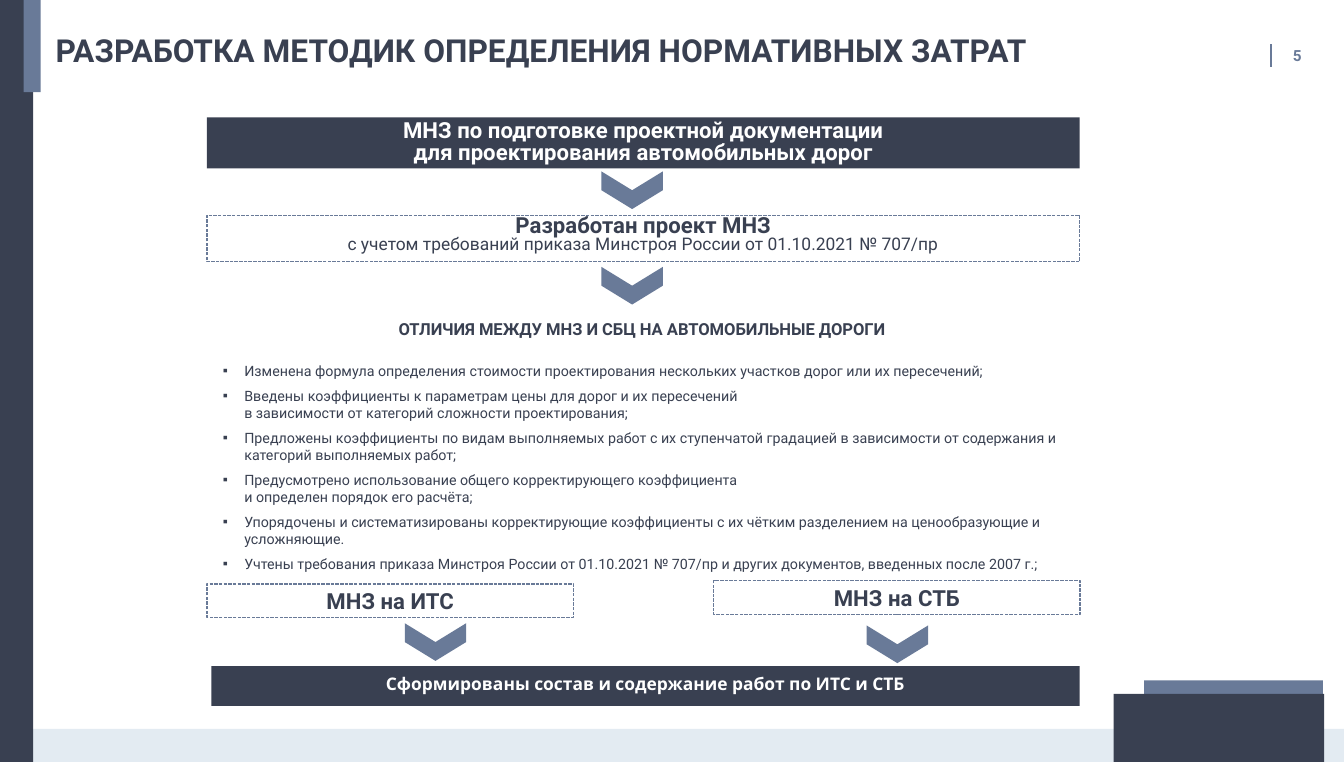
from copy import deepcopy

from lxml import etree
from pptx import Presentation
from pptx import util as u
from pptx.dml.color import RGBColor
from pptx.enum import dml, shapes, text
from pptx.oxml.ns import qn

NAVY, STEEL, PALE, WHITE = "394051", "697A98", "E3EBF2", "FFFFFF"
CENTER, LEFT = text.PP_ALIGN.CENTER, text.PP_ALIGN.LEFT
DIFFERENCES = [
    "Изменена формула определения стоимости проектирования нескольких участков дорог или их пересечений;",
    "Введены коэффициенты к параметрам цены для дорог и их пересечений\vв зависимости от категорий сложности проектирования;",
    "Предложены коэффициенты по видам выполняемых работ с их ступенчатой градацией в зависимости от содержания и категорий выполняемых работ;",
    "Предусмотрено использование общего корректирующего коэффициента\vи определен порядок его расчёта;",
    "Упорядочены и систематизированы корректирующие коэффициенты с их чётким разделением на ценообразующие и усложняющие.",
    "Учтены требования приказа Минстроя России от 01.10.2021 № 707/пр и других документов, введенных после 2007 г.;",
]


def rgb(color):
    """Turn a hex string into a colour."""
    return RGBColor.from_string(color)


def place(item, left, top, width, height):
    """Move and size an element, in centimetres."""
    item.left, item.top, item.width, item.height = map(u.Cm, (left, top, width, height))


def style(paragraph, size, color=NAVY, bold=True, align=CENTER, spacing=1.0, before=0, font="Roboto"):
    """Format a paragraph, its runs and its line breaks."""
    paragraph.alignment = align
    paragraph.line_spacing = spacing
    paragraph.space_before = u.Pt(before)
    for run in paragraph.runs:
        run.font.name, run.font.size, run.font.bold = font, u.Pt(size), bold
        run.font.color.rgb = rgb(color)
    for line_break in paragraph._p.findall(qn("a:br")):
        line_break.insert(0, deepcopy(paragraph.runs[0]._r.rPr))


def add_block(slide, box, fill=None, outline=None, preset=shapes.MSO_SHAPE.RECTANGLE):
    """Add a flat shape with a fill or a dashed outline."""
    block = slide.shapes.add_shape(preset, *map(u.Cm, box))
    block.shadow.inherit = False
    if fill:
        block.fill.solid()
        block.fill.fore_color.rgb = rgb(fill)
    else:
        block.fill.background()
    if outline:
        block.line.color.rgb = rgb(outline)
        block.line.width = u.Pt(0.75)
        block.line.dash_style = dml.MSO_LINE.SQUARE_DOT
    else:
        block.line.fill.background()
    return block


def add_stage(slide, box, label, fill=None, size=14, **formats):
    """Add a labelled stage, outlined unless it has a fill."""
    stage = add_block(slide, box, fill, None if fill else STEEL)
    stage.text_frame.text = label
    style(stage.text_frame.paragraphs[0], size, WHITE if fill else NAVY, **formats)
    return stage


def add_chevron(slide, left, top):
    """Add a chevron that points down."""
    add_block(slide, (left, top, 0.84, 1.37), STEEL, preset=shapes.MSO_SHAPE.CHEVRON).rotation = 90


def add_frame(slide):
    """Add the decorative bars and the page number."""
    for box, color in [
        ((0, 16.26, 30, 0.74), PALE),
        ((0, 0, 0.74, 17), NAVY),
        ((25.54, 15.18, 3.99, 1.07), STEEL),
        ((24.86, 15.48, 4.7, 1.52), NAVY),
        ((0.53, 0, 0.38, 2.06), STEEL),
    ]:
        add_block(slide, box, color)
    divider = slide.shapes.add_connector(
        shapes.MSO_CONNECTOR.STRAIGHT, u.Cm(28.37), u.Cm(0.99), u.Cm(28.37), u.Cm(1.5))
    divider.line.color.rgb = rgb(STEEL)
    divider.line.width = u.Pt(1.5)
    etree.SubElement(divider._element.spPr, qn("a:effectLst"))
    page = slide.shapes.add_textbox(u.Cm(28.61), u.Cm(1.04), u.Cm(1.35), u.Cm(0.38)).text_frame
    page.word_wrap = True
    page.vertical_anchor = text.MSO_ANCHOR.MIDDLE
    page.text = "5"
    style(page.paragraphs[0], 9.7, STEEL, align=LEFT)


def fill_title(title):
    """Set the slide title."""
    place(title, 1.24, 0.66, 26.67, 0.84)
    frame = title.text_frame
    frame.text = "РАЗРАБОТКА МЕТОДИК ОПРЕДЕЛЕНИЯ НОРМАТИВНЫХ ЗАТРАТ"
    frame.margin_left = frame.margin_right = frame.margin_top = frame.margin_bottom = 0
    frame.vertical_anchor = text.MSO_ANCHOR.TOP
    frame.auto_size = text.MSO_AUTO_SIZE.NONE
    style(frame.paragraphs[0], 20, align=LEFT, spacing=u.Pt(25))


def set_bullet(paragraph, mark=None):
    """Give a paragraph a hanging bullet, or none."""
    properties = paragraph._p.get_or_add_pPr()
    indent = u.Cm(0.48) if mark else 0
    properties.set("marL", str(indent))
    properties.set("indent", str(-indent))
    if mark:
        color = etree.SubElement(properties, qn("a:buClr"))
        etree.SubElement(color, qn("a:srgbClr"), val=NAVY)
        etree.SubElement(properties, qn("a:buChar"), char=mark)
    else:
        etree.SubElement(properties, qn("a:buNone"))


def fill_differences(body):
    """Set the heading and the list of differences."""
    place(body, 4.72, 6.99, 19.23, 5.99)
    frame = body.text_frame
    frame.auto_size = text.MSO_AUTO_SIZE.NONE
    heading = frame.paragraphs[0]
    heading.text = "ОТЛИЧИЯ МЕЖДУ МНЗ И СБЦ НА АВТОМОБИЛЬНЫЕ ДОРОГИ"
    set_bullet(heading)
    style(heading, 10.5)
    for index, difference in enumerate(DIFFERENCES):
        entry = frame.add_paragraph()
        entry.text = difference
        set_bullet(entry, "▪")
        style(entry, 9, bold=False, align=LEFT, before=5 if index else 14.5)


def main():
    """Build and save the slide."""
    deck = Presentation()
    deck.slide_width, deck.slide_height = u.Cm(30), u.Cm(17)
    slide = deck.slides.add_slide(deck.slide_layouts[1])
    add_frame(slide)
    fill_title(slide.shapes.title)
    fill_differences(slide.placeholders[1])

    add_stage(slide, (4.62, 2.62, 19.48, 1.14),
              "МНЗ по подготовке проектной документации\vдля проектирования автомобильных дорог",
              NAVY, spacing=u.Pt(14))
    draft = add_stage(slide, (4.62, 4.8, 19.48, 1.04), "Разработан проект МНЗ", spacing=u.Pt(10))
    basis = draft.text_frame.add_paragraph()
    basis.text = "с учетом требований приказа Минстроя России от 01.10.2021 № 707/пр"
    style(basis, 11, bold=False, spacing=u.Pt(10))
    add_stage(slide, (4.62, 13.03, 8.18, 0.74), "МНЗ на ИТС")
    add_stage(slide, (15.93, 12.95, 8.18, 0.76), "МНЗ на СТБ")
    add_stage(slide, (4.72, 14.86, 19.38, 0.89), "Сформированы состав и содержание работ по ИТС и СТБ",
              NAVY, size=11, spacing=u.Pt(10), font="Karla")

    for left, top in [(13.69, 3.56), (13.69, 5.69), (9.3, 13.64), (19.61, 13.69)]:
        add_chevron(slide, left, top)
    deck.save("out.pptx")


if __name__ == "__main__":
    main()
